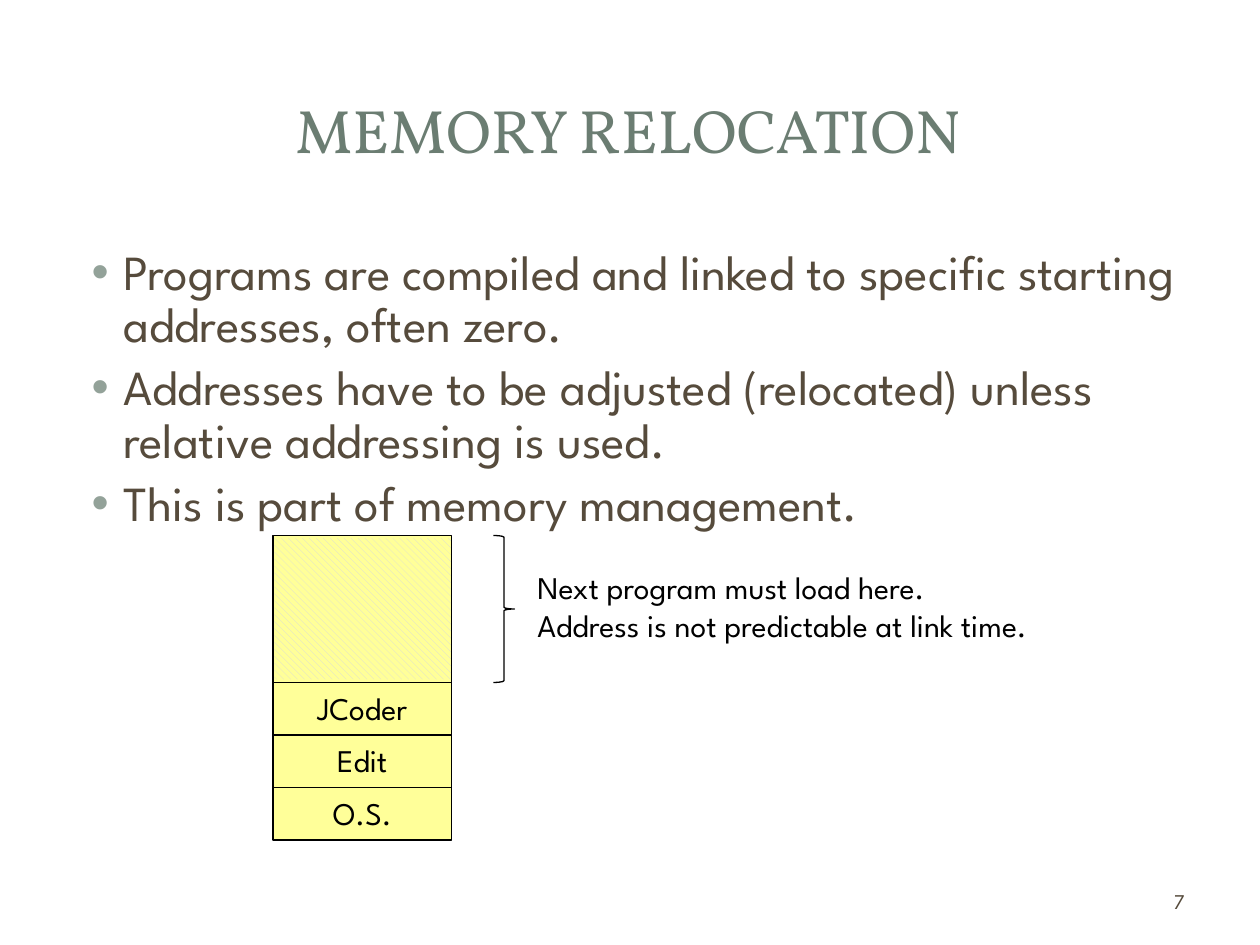
import pptx
import pptx.dml.color
import pptx.enum.dml
import pptx.enum.shapes
import pptx.enum.text
import pptx.oxml
import pptx.oxml.ns
import pptx.util

ALIGN = pptx.enum.text.PP_ALIGN
ANCHOR = pptx.enum.text.MSO_ANCHOR
SHAPE = pptx.enum.shapes.MSO_SHAPE
COLUMNS, ROWS = 24, 18


def color(value):
    return pptx.dml.color.RGBColor.from_string(value)


def append_xml(parent, tag, attributes="", content=""):
    namespace = pptx.oxml.ns.nsdecls("a")
    parent.append(pptx.oxml.parse_xml(
        f"<a:{tag} {namespace} {attributes}>{content}</a:{tag}>"))


class SlideBuilder:
    """Holds the style and the current slide; lengths are grid columns and rows."""
    body_font, title_font = "League Spartan", "Vollkorn"
    black, brown, green = "000000", "564B3C", "6B7D72"
    bullet_color, yellow, hatch = "93A299", "FFFF99", "D9D9D9"
    line_width = pptx.util.Pt(0.75)

    def __init__(self, presentation):
        self.cell_width = presentation.slide_width / COLUMNS
        self.cell_height = presentation.slide_height / ROWS
        self.slide = presentation.slides.add_slide(presentation.slide_layouts[6])

    def place(self, column, row, width, height):
        return (round(column * self.cell_width), round(row * self.cell_height),
                round(width * self.cell_width), round(height * self.cell_height))

    def text(self, area, paragraphs, size=18, ink=black, font=body_font,
             grow=False, anchor=ANCHOR.TOP, bullets=False, **paragraph_format):
        frame = self.slide.shapes.add_textbox(*self.place(*area)).text_frame
        frame.word_wrap = True
        frame.vertical_anchor = anchor
        if grow:
            frame.auto_size = pptx.enum.text.MSO_AUTO_SIZE.SHAPE_TO_FIT_TEXT
        frame.text = "\n".join(paragraphs)
        run_format = {"size": pptx.util.Pt(size), "name": font}
        for paragraph in frame.paragraphs:
            for name, value in paragraph_format.items():
                setattr(paragraph, name, value)
            for run in paragraph.runs:
                for name, value in run_format.items():
                    setattr(run.font, name, value)
                run.font.color.rgb = color(ink)
            if bullets:
                self.bullet(paragraph)

    def bullet(self, paragraph):
        properties = paragraph._p.get_or_add_pPr()
        properties.set("marL", str(pptx.util.Inches(0.38)))
        properties.set("indent", str(pptx.util.Inches(-0.25)))
        append_xml(properties, "buClr",
                   content=f'<a:srgbClr val="{self.bullet_color}"/>')
        append_xml(properties, "buFont", 'typeface="Arial"')
        append_xml(properties, "buChar", 'char="•"')

    def shape(self, kind, area, fill=None, pattern=None, outline=True):
        shape = self.slide.shapes.add_shape(kind, *self.place(*area))
        shape.shadow.inherit = False
        if pattern:
            shape.fill.patterned()
            shape.fill.pattern = pattern
            shape.fill.fore_color.rgb = color(self.hatch)
            shape.fill.back_color.rgb = color(fill)
        elif fill:
            shape.fill.solid()
            shape.fill.fore_color.rgb = color(fill)
        else:
            shape.fill.background()
        if outline:
            shape.line.color.rgb = color(self.black)
            shape.line.width = self.line_width
        else:
            shape.line.fill.background()

    def divider(self, column, row, width):
        left, top, length, _ = self.place(column, row, width, 0)
        connector = self.slide.shapes.add_connector(
            pptx.enum.shapes.MSO_CONNECTOR.STRAIGHT, left, top, left + length, top)
        connector.line.color.rgb = color(self.black)
        connector.line.width = self.line_width
        append_xml(connector._element.spPr, "effectLst")


def main():
    presentation = pptx.Presentation()
    presentation.slide_width = pptx.util.Inches(10)
    presentation.slide_height = pptx.util.Inches(7.5)
    builder = SlideBuilder(presentation)

    # Title, bullets and slide number
    builder.text((1.13, 1.08, 21.67, 2.74), ["MEMORY RELOCATION"], size=35,
                 ink=builder.green, font=builder.title_font,
                 anchor=ANCHOR.MIDDLE, alignment=ALIGN.CENTER)
    builder.text((1.2, 4.6, 21.6, 11.47), [
        "Programs are compiled and linked to specific starting addresses, often zero.",
        "Addresses have to be adjusted (relocated) unless relative addressing is used.",
        "This is part of memory management.",
    ], size=28, ink=builder.brown, bullets=True, line_spacing=0.9,
        space_before=pptx.util.Pt(5.6))
    builder.text((17.2, 16.68, 5.6, 0.96), ["7"], size=12, ink=builder.brown,
                 anchor=ANCHOR.MIDDLE, alignment=ALIGN.RIGHT)

    # Memory stack: one row for each loaded program, free space above
    left, top, width, first_row = 5.2, 10.2, 3.4, 13
    programs = ["JCoder", "Edit", "O.S."]
    free_height = first_row - top
    builder.shape(SHAPE.RECTANGLE, (left, top, width, free_height + len(programs)),
                  fill=builder.yellow)
    for row, program in enumerate(programs, first_row):
        builder.text((left, row, width, 0.97), [program], grow=True,
                     alignment=ALIGN.CENTER)
        builder.divider(left, row, width)

    # Free space with its brace and note
    builder.shape(SHAPE.RIGHT_BRACE, (9.4, top, 0.4, free_height))
    builder.text((10, 10.7, 11.4, 1.7), [
        "Next program must load here.\vAddress is not predictable at link time."],
        grow=True)
    builder.shape(SHAPE.RECTANGLE, (left + 0.03, top + 0.05, 3.36, 2.69),
                  fill=builder.yellow, outline=False,
                  pattern=pptx.enum.dml.MSO_PATTERN.WIDE_DOWNWARD_DIAGONAL)

    presentation.save("out.pptx")


if __name__ == "__main__":
    main()
